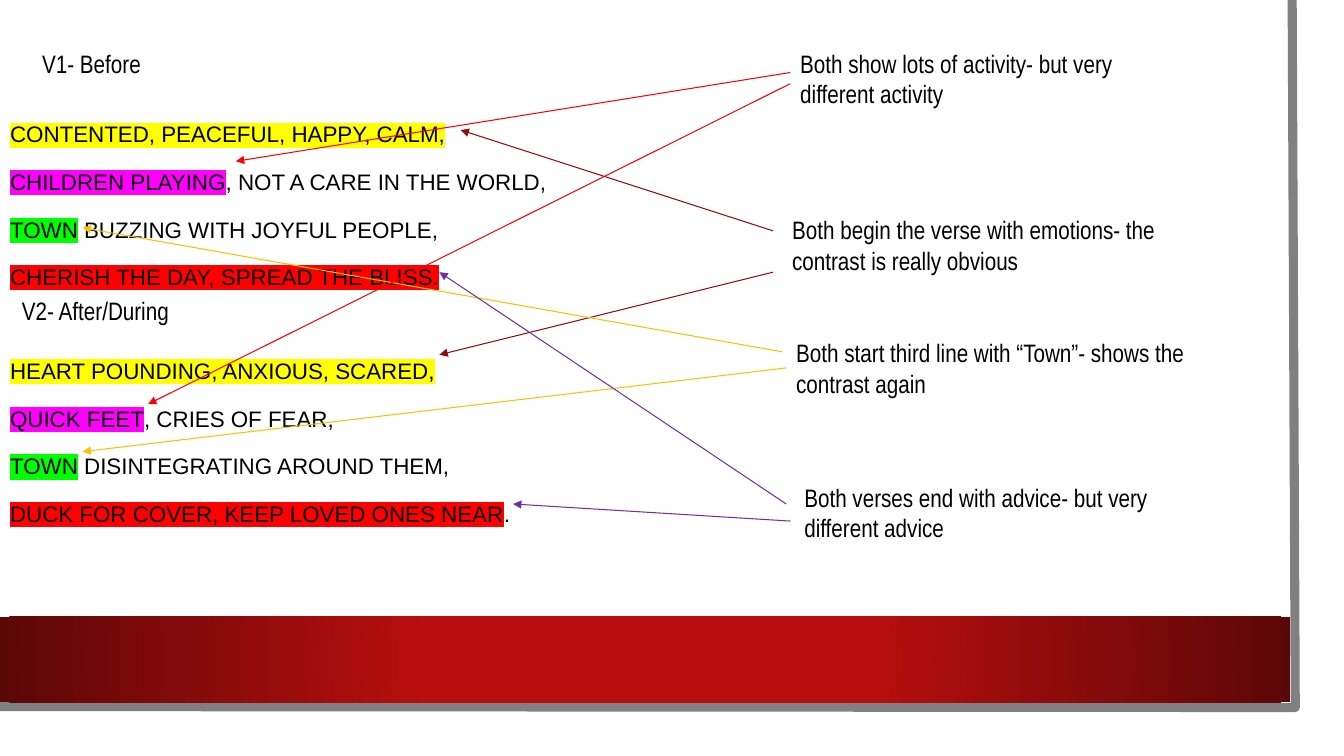
import pptx
import pptx.dml.color
import pptx.enum.shapes
import pptx.enum.text
import pptx.util
from lxml import etree
from pptx.oxml.ns import qn

Pt = pptx.util.Pt

COLORS = {
    "text": "000000", "frame": "808080", "band": "B80E0F", "band_edge": "5C0707",
    "emotion": "FFFF00", "activity": "FF00FF", "town": "00FF00", "advice": "FF0000",
    "emotion_link": "930B0C", "town_link": "FFC000",
    "activity_link": "FF0000", "advice_link": "7030A0",
}
LYRIC_FONT = {"name": "Arial", "size": Pt(16)}
NOTE_FONT = {"name": "Arial Narrow", "size": Pt(18)}
LINE_GAP = 11
VERSE_GAP = 44

VERSES = [
    [
        [("CONTENTED, PEACEFUL, HAPPY, CALM,", "emotion")],
        [("CHILDREN PLAYING", "activity"), (", NOT A CARE IN THE WORLD,", None)],
        [("TOWN", "town"), (" BUZZING WITH JOYFUL PEOPLE,", None)],
        [("CHERISH THE DAY, SPREAD THE BLISS.", "advice")],
    ],
    [
        [("HEART POUNDING, ANXIOUS, SCARED,", "emotion")],
        [("QUICK FEET", "activity"), (", CRIES OF FEAR,", None)],
        [("TOWN", "town"), (" DISINTEGRATING AROUND THEM,", None)],
        [("DUCK FOR COVER, KEEP LOVED ONES NEAR", "advice"), (".", None)],
    ],
]
VERSE_LABELS = [("V1- Before", 23, 31), ("V2- After/During", 8.6, 207.4)]
COMPARISONS = [
    ("Both begin the verse with emotions- the contrast is really obvious",
     558.7, 149.8, "emotion_link",
     [(552.2, 164.9, 329, 92.9), (552.2, 194.4, 313.9, 253.4)]),
    ("Both start third line with “Town”- shows the contrast again",
     561.6, 237.6, "town_link",
     [(558.7, 251.3, 59, 162.7), (561.6, 262.8, 59, 322.6)]),
    ("Both show lots of activity- but very different activity",
     564.5, 31, "activity_link",
     [(564.5, 51.8, 168.5, 115.2), (564.5, 59.8, 105.8, 288.7)]),
    ("Both verses end with advice- but very different advice",
     567.4, 340.6, "advice_link",
     [(561.6, 360, 313.9, 194.4), (564.5, 372.2, 366.5, 360)]),
]


def rgb(color):
    return pptx.dml.color.RGBColor.from_string(COLORS[color])


def apply(target, values):
    for key, value in values.items():
        setattr(target, key, value)


def add_child(parent, tag, **attributes):
    return etree.SubElement(parent, qn(tag), attributes)


def add_words(paragraph, words, font, highlight=None):
    run = paragraph.add_run()
    run.text = words
    run.font.color.rgb = rgb("text")
    if highlight:
        marker = add_child(run.font._element, "a:highlight")
        add_child(marker, "a:srgbClr", val=COLORS[highlight])
    apply(run.font, font)


def add_frame(slide):
    builder = slide.shapes.build_freeform(Pt(923), 0)
    builder.add_line_segments([(Pt(925.2), Pt(505.4)), (0, Pt(504.7))], close=False)
    frame = builder.convert_to_shape()
    frame.shadow.inherit = False
    frame.fill.background()
    frame.line.color.rgb = rgb("frame")
    frame.line.width = Pt(6.5)


def add_band(slide):
    band = slide.shapes.add_shape(
        pptx.enum.shapes.MSO_SHAPE.RECTANGLE, 0, Pt(440.6), Pt(921.6), Pt(61.2))
    band.shadow.inherit = False
    band.line.fill.background()
    band.fill.gradient()
    gradient = band._element.spPr.find(qn("a:gradFill"))
    for child in list(gradient):
        gradient.remove(child)
    stops = add_child(gradient, "a:gsLst")
    for position, color in (("34000", "band"), ("100000", "band_edge")):
        stop = add_child(stops, "a:gs", pos=position)
        add_child(stop, "a:srgbClr", val=COLORS[color])
    circle = add_child(gradient, "a:path", path="circle")
    add_child(circle, "a:fillToRect", l="50000", t="50000", r="50000", b="50000")


def add_verses(slide):
    lyrics = slide.placeholders[1]
    apply(lyrics, {"left": 0, "top": Pt(34.6), "width": Pt(495.4), "height": Pt(403.9)})
    frame = lyrics.text_frame
    apply(frame, {
        "word_wrap": True,
        "auto_size": pptx.enum.text.MSO_AUTO_SIZE.NONE,
        "vertical_anchor": pptx.enum.text.MSO_ANCHOR.TOP,
        "margin_top": Pt(47.6),
    })
    for verse_number, verse in enumerate(VERSES):
        for line_number, line in enumerate(verse):
            if verse_number == line_number == 0:
                paragraph, gap = frame.paragraphs[0], 0
            else:
                paragraph = frame.add_paragraph()
                gap = LINE_GAP if line_number else VERSE_GAP
            properties = paragraph._p.get_or_add_pPr()
            properties.set("marL", "0")
            properties.set("indent", "0")
            add_child(properties, "a:buNone")
            apply(paragraph, {"line_spacing": 1.2, "space_before": Pt(gap)})
            for words, highlight in line:
                add_words(paragraph, words, LYRIC_FONT, highlight)


def add_note(slide, words, left, top, width, height):
    note = slide.shapes.add_textbox(Pt(left), Pt(top), Pt(width), Pt(height))
    note.text_frame.word_wrap = True
    add_words(note.text_frame.paragraphs[0], words, NOTE_FONT)


def add_arrow(slide, color, ends):
    arrow = slide.shapes.add_connector(
        pptx.enum.shapes.MSO_CONNECTOR.STRAIGHT, *(Pt(end) for end in ends))
    arrow.line.color.rgb = rgb(color)
    arrow.line.width = Pt(0.75)
    add_child(arrow.line._get_or_add_ln(), "a:tailEnd", type="triangle")
    add_child(arrow._element.spPr, "a:effectLst")


def main():
    deck = pptx.Presentation()
    apply(deck, {"slide_width": Pt(960), "slide_height": Pt(540)})
    slide = deck.slides.add_slide(deck.slide_layouts[1])
    title = slide.shapes.title._element
    title.getparent().remove(title)
    add_frame(slide)
    add_band(slide)
    add_verses(slide)
    for words, left, top in VERSE_LABELS:
        add_note(slide, words, left, top, 171.4, 28.8)
    for words, left, top, color, links in COMPARISONS:
        for ends in links:
            add_arrow(slide, color, ends)
        add_note(slide, words, left, top, 294.5, 51.1)
    deck.save("out.pptx")


if __name__ == "__main__":
    main()
